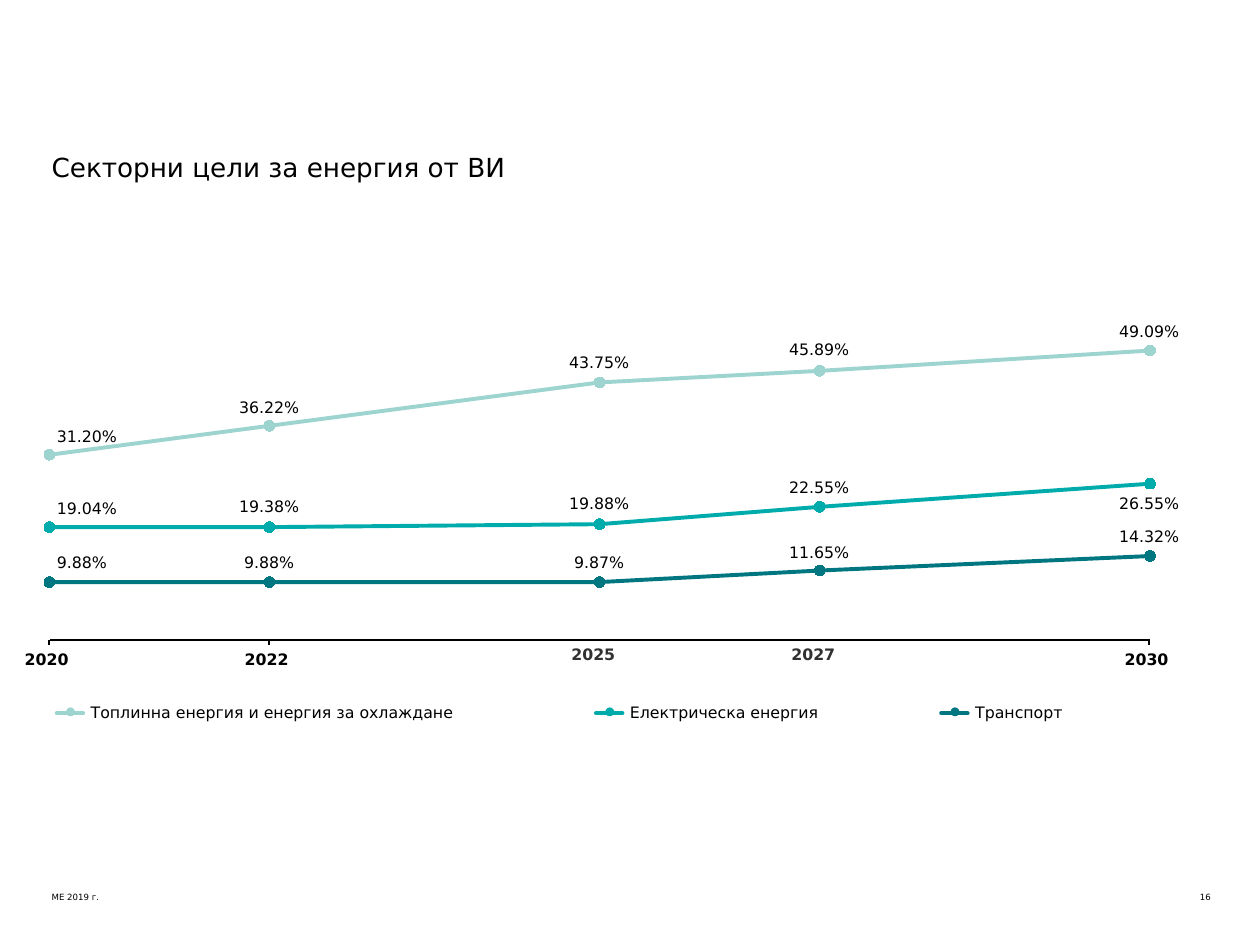
from lxml.etree import SubElement
from pptx import Presentation
from pptx.chart.data import XyChartData
from pptx.dml.color import RGBColor
from pptx.enum.chart import XL_CHART_TYPE, XL_MARKER_STYLE, XL_TICK_LABEL_POSITION, XL_TICK_MARK
from pptx.enum.shapes import MSO_CONNECTOR, MSO_SHAPE
from pptx.enum.text import MSO_ANCHOR, PP_ALIGN
from pptx.oxml import parse_xml
from pptx.oxml.ns import nsdecls, qn
from pptx.util import Inches, Pt

FONT = "DejaVu Sans"
TITLE = "Секторни цели за енергия от ВИ"
FOOTER, PAGE = "МЕ 2019 г.", "16"
YEARS = [2020, 2022, 2025, 2027, 2030]
GREY_YEARS = [2025, 2027]
SECTORS = [
    {"name": "Топлинна енергия и енергия за охлаждане", "color": "9DD4CF",
     "shares": [31.20, 36.22, 43.75, 45.89, 49.09], "key_left": 0.45, "name_width": 2.9},
    {"name": "Електрическа енергия", "color": "00ABAB",
     "shares": [19.04, 19.38, 19.88, 22.55, 26.55], "key_left": 4.73, "name_width": 1.5},
    {"name": "Транспорт", "color": "007680",
     "shares": [9.88, 9.88, 9.87, 11.65, 14.32], "key_left": 7.47, "name_width": 1},
]
LABELS_BELOW = [("Електрическа енергия", 2030)]
PEAK = max(max(sector["shares"]) for sector in SECTORS)
AXIS_LEFT, AXIS_WIDTH, AXIS_Y, PEAK_HEIGHT = 0.39, 8.73, 5.08, 2.3
LABEL_HEIGHT, KEY_Y = 0.15, 5.66
PLOT_LAYOUT = {"layoutTarget": "inner", "xMode": "edge", "yMode": "edge",
               "x": 0.008, "y": 0.027, "w": 0.985, "h": 0.945}
NO_LABELS = {"has_major_gridlines": False, "has_minor_gridlines": False,
             "tick_label_position": XL_TICK_LABEL_POSITION.NONE,
             "minor_tick_mark": XL_TICK_MARK.NONE}
YEAR_AXIS = {**NO_LABELS, "minimum_scale": 2020, "maximum_scale": 2030, "major_unit": 2,
             "major_tick_mark": XL_TICK_MARK.NONE}
SHARE_AXIS = {**NO_LABELS, "minimum_scale": 0, "maximum_scale": 102, "major_unit": 10,
              "major_tick_mark": XL_TICK_MARK.OUTSIDE}


def rgb(color):
    """Turn a hex string into a colour."""
    return RGBColor.from_string(color)


def apply(target, values):
    """Set each named attribute on the target."""
    for name, value in values.items():
        setattr(target, name, value)


def year_x(year):
    """Give the horizontal place of a year."""
    return AXIS_LEFT + AXIS_WIDTH * (year - YEARS[0]) / (YEARS[-1] - YEARS[0])


def share_y(share):
    """Give the vertical place of a share."""
    return AXIS_Y - PEAK_HEIGHT * share / PEAK


def style_line(line, color, width):
    """Give a line its colour and width."""
    line.color.rgb = rgb(color)
    line.width = Pt(width)


def add_text(slide, text, place, size=9, color="000000", bold=False,
             align=PP_ALIGN.LEFT, anchor=MSO_ANCHOR.TOP, wrap=False, side=0):
    """Add one line of text."""
    frame = slide.shapes.add_textbox(*map(Inches, place)).text_frame
    apply(frame, {"margin_left": Inches(side), "margin_right": Inches(side), "margin_top": 0,
                  "margin_bottom": 0, "word_wrap": wrap, "vertical_anchor": anchor})
    paragraph = frame.paragraphs[0]
    paragraph.alignment = align
    run = paragraph.add_run()
    run.text = text
    apply(run.font, {"name": FONT, "size": Pt(size), "bold": bold})
    run.font.color.rgb = rgb(color)


def add_line(slide, start, end, color, width, cap="flat"):
    """Add a straight line without a shadow."""
    connector = slide.shapes.add_connector(MSO_CONNECTOR.STRAIGHT, *map(Inches, start + end))
    style_line(connector.line, color, width)
    properties = connector._element.spPr
    properties.find(qn("a:ln")).set("cap", cap)
    SubElement(properties, qn("a:effectLst"))


def add_sector_chart(slide):
    """Add the lines of the sectors, scaled so that the peak is 100."""
    data = XyChartData(number_format="0")
    for sector in SECTORS:
        points = data.add_series(sector["name"])
        for year, share in zip(YEARS, sector["shares"]):
            points.add_data_point(year, round(100 * share / PEAK))
    place = map(Inches, (0.32, 2.67, 8.87, 2.48))
    chart = slide.shapes.add_chart(XL_CHART_TYPE.XY_SCATTER_LINES, *place, data).chart
    apply(chart, {"has_title": False, "has_legend": False})
    apply(chart.font, {"name": FONT, "size": Pt(10)})
    chart.font.color.rgb = rgb("000000")
    chart.plots[0].vary_by_categories = False
    for axis, values, color in [(chart.category_axis, YEAR_AXIS, "000000"),
                                (chart.value_axis, SHARE_AXIS, "FFFFFF")]:
        apply(axis, values)
        style_line(axis.format.line, color, 0.75)
    for series, sector in zip(chart.plots[0].series, SECTORS):
        style_line(series.format.line, sector["color"], 2.25)
        apply(series.marker, {"style": XL_MARKER_STYLE.CIRCLE, "size": 6})
        series.marker.format.fill.solid()
        series.marker.format.fill.fore_color.rgb = rgb(sector["color"])
        style_line(series.marker.format.line, sector["color"], 0.75)
    plot_area = chart._chartSpace.chart.plotArea
    for layout in plot_area.findall(qn("c:layout")):
        plot_area.remove(layout)
    settings = "".join(f'<c:{name} val="{value}"/>' for name, value in PLOT_LAYOUT.items())
    plot_area.insert(0, parse_xml(
        f'<c:layout {nsdecls("c")}><c:manualLayout>{settings}</c:manualLayout></c:layout>'))


def add_years(slide):
    """Add the ticks and the years under the axis."""
    for year in YEARS:
        x = year_x(year)
        if year in GREY_YEARS:
            add_text(slide, str(year), (x - 0.22, 5.12, 0.43, LABEL_HEIGHT),
                     color="313131", bold=True, wrap=True)
        else:
            add_line(slide, (x, AXIS_Y + 0.04), (x, AXIS_Y), "000000", 0.75)
            add_text(slide, str(year), (x - 0.22, 5.16, 0.4, LABEL_HEIGHT),
                     bold=True, align=PP_ALIGN.CENTER)


def add_share_labels(slide):
    """Add the share beside each point."""
    for sector in SECTORS:
        for year, share in zip(YEARS, sector["shares"]):
            text = f"{share:.2f}%"
            width = 0.06 + 0.08 * len(text)
            left = 0.42 if year == YEARS[0] else year_x(year) - width / 2
            below = (sector["name"], year) in LABELS_BELOW
            top = share_y(share) + (0.08 if below else -0.23)
            add_text(slide, text, (left, top, width, LABEL_HEIGHT), align=PP_ALIGN.CENTER,
                     anchor=MSO_ANCHOR.TOP if below else MSO_ANCHOR.BOTTOM, side=0.02)


def add_legend(slide):
    """Add the key and the name of each sector."""
    for sector in SECTORS:
        left, color = sector["key_left"], sector["color"]
        add_line(slide, (left, KEY_Y), (left + 0.21, KEY_Y), color, 2.25, cap="rnd")
        dot = slide.shapes.add_shape(
            MSO_SHAPE.OVAL, *map(Inches, (left + 0.08, KEY_Y - 0.04, 0.06, 0.06)))
        dot.shadow.inherit = False
        dot.fill.solid()
        dot.fill.fore_color.rgb = rgb(color)
        style_line(dot.line, color, 0.75)
        add_text(slide, sector["name"], (left + 0.27, 5.58, sector["name_width"], LABEL_HEIGHT),
                 anchor=MSO_ANCHOR.MIDDLE)


def main():
    """Build the slide and save it."""
    deck = Presentation()
    apply(deck, {"slide_width": Inches(10), "slide_height": Inches(7.5)})
    slide = deck.slides.add_slide(deck.slide_layouts[6])
    add_text(slide, TITLE, (0.41, 1.2, 9.18, 0.27), size=15, wrap=True)
    add_sector_chart(slide)
    add_years(slide)
    add_share_labels(slide)
    add_legend(slide)
    add_text(slide, FOOTER, (0.41, 7.08, 4.39, 0.22), size=4.9, wrap=True)
    add_text(slide, PAGE, (9.36, 7.08, 0.25, 0.08), size=4.9, align=PP_ALIGN.RIGHT, wrap=True)
    deck.save("out.pptx")


if __name__ == "__main__":
    main()
